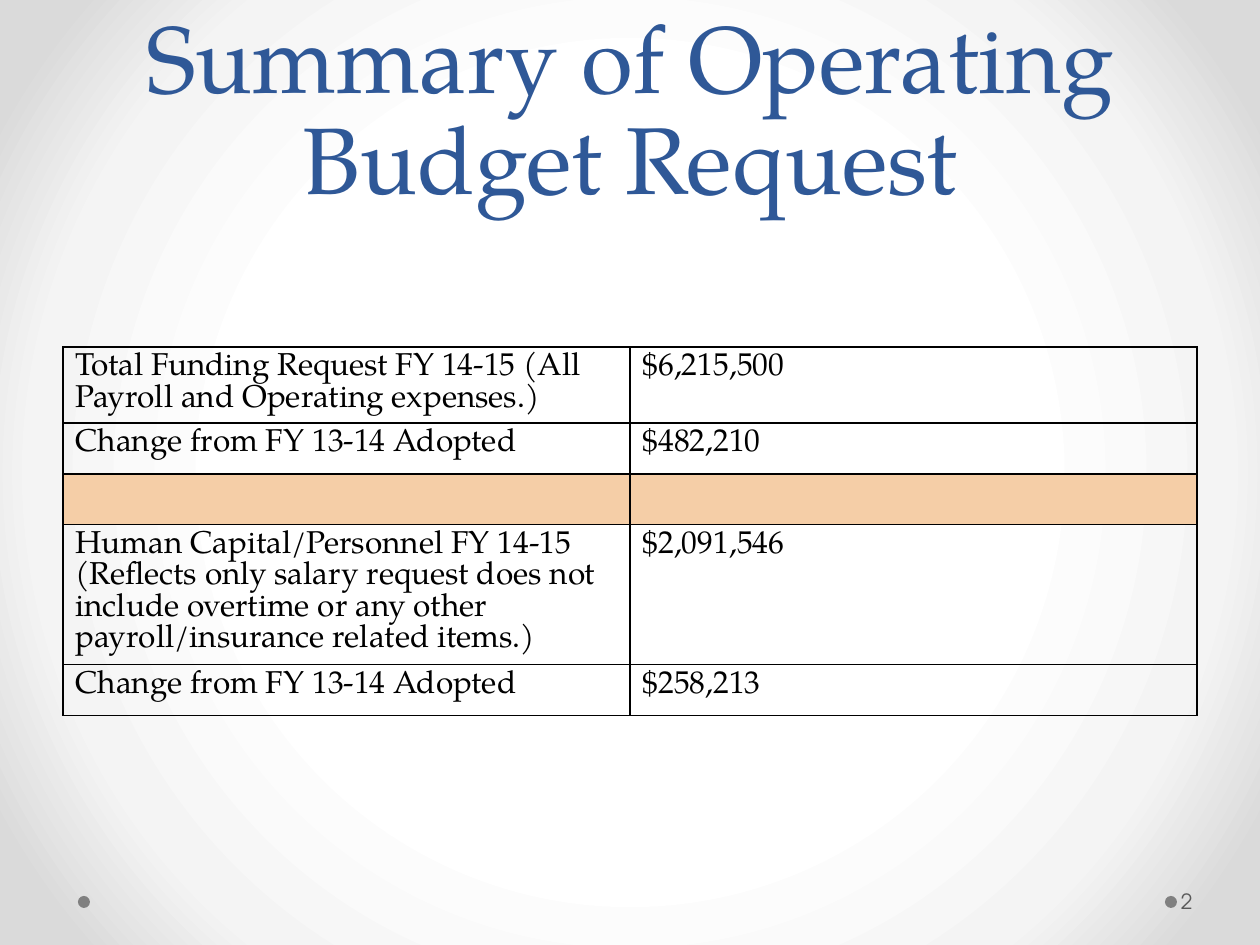
from pptx import Presentation
from pptx.dml.color import RGBColor
from pptx.enum.shapes import MSO_SHAPE as Shape
from pptx.enum.text import MSO_ANCHOR as Anchor, PP_ALIGN as Align
from pptx.oxml import parse_xml as to_xml
from pptx.oxml.ns import nsdecls
from pptx.util import Pt

SCALE = 914400 / 126
BLUE = RGBColor(0x2F, 0x58, 0x97)
BLACK = RGBColor(0, 0, 0)
GRAY = RGBColor(0x80, 0x80, 0x80)
DARK = RGBColor(0x59, 0x59, 0x59)
PEACH = RGBColor(0xF5, 0xCE, 0xA7)
SERIF = "TeX Gyre Pagella"
SANS = "TeX Gyre Adventor"


def px(*nums):
    return [round(n * SCALE) for n in nums]


def write(frame, text, font=SERIF, size=18, color=BLACK, align=Align.LEFT, space=None):
    frame.word_wrap = True
    para = frame.paragraphs[0]
    para.alignment = align
    if space:
        para.line_spacing = Pt(space)
    para.font.size = Pt(size)
    if text:
        run = para.add_run()
        run.text = text
        run.font.name = font
        run.font.size = Pt(size)
        run.font.color.rgb = color


deck = Presentation()
deck.slide_width, deck.slide_height = px(1260, 945)
slide = deck.slides.add_slide(deck.slide_layouts[6])

fill = slide.background.fill
fill.gradient()
stops = "".join(
    f'<a:gs pos="{pos * 1000}"><a:srgbClr val="{color}"/></a:gs>'
    for pos, color in [(0, "FFFFFF"), (50, "FFFFFF"), (76, "F4F4F4"), (92, "DADADA"), (100, "DADADA")]
)
grad = to_xml(
    f'<a:gradFill {nsdecls("a")} rotWithShape="1"><a:gsLst>{stops}</a:gsLst>'
    '<a:path path="circle"><a:fillToRect l="50000" t="50000" r="50000" b="50000"/>'
    "</a:path></a:gradFill>"
)
back = slide.background._cSld.bg.bgPr
back.replace(back[0], grad)

for left in (1165, 78):
    dot = slide.shapes.add_shape(Shape.OVAL, *px(left, 896, 12, 12))
    dot.shadow.inherit = False
    dot.fill.solid()
    dot.fill.fore_color.rgb = GRAY
    dot.line.fill.background()

title = slide.shapes.add_textbox(*px(63, 0, 1134, 220)).text_frame
title.vertical_anchor = Anchor.BOTTOM
write(title, "Summary of Operating Budget Request", size=54, color=BLUE, align=Align.CENTER, space=58)

rows = [
    (76, "Total Funding Request FY 14-15 (All Payroll and Operating expenses.)", "$6,215,500"),
    (51, "Change from FY 13-14 Adopted", "$482,210"),
    (44, "", ""),
    (140, "Human Capital/Personnel FY 14-15 (Reflects only salary request does not "
          "include overtime or any other payroll/insurance related items.)", "$2,091,546"),
    (51, "Change from FY 13-14 Adopted", "$258,213"),
]
high = sum(row[0] for row in rows)
table = slide.shapes.add_table(len(rows), 2, *px(63, 347, 1134, high)).table
table.first_row = table.horz_banding = False
for r, (tall, *texts) in enumerate(rows):
    table.rows[r].height = px(tall)[0]
    for c, text in enumerate(texts):
        cell = table.cell(r, c)
        write(cell.text_frame, text, space=18)
        if text:
            cell.fill.background()
        else:
            cell.fill.solid()
            cell.fill.fore_color.rgb = PEACH
        props = cell._tc.get_or_add_tcPr()
        for i, side in enumerate("LRTB"):
            props.insert(i, to_xml(
                f'<a:ln{side} {nsdecls("a")} w="12700"><a:solidFill>'
                f'<a:srgbClr val="{BLACK}"/></a:solidFill></a:ln{side}>'
            ))

page = slide.shapes.add_textbox(*px(1177, 876, 77, 50)).text_frame
page.vertical_anchor = Anchor.MIDDLE
page.margin_left, page.margin_right = px(4, 6)
write(page, "2", font=SANS, size=12, color=DARK)

deck.save("out.pptx")
